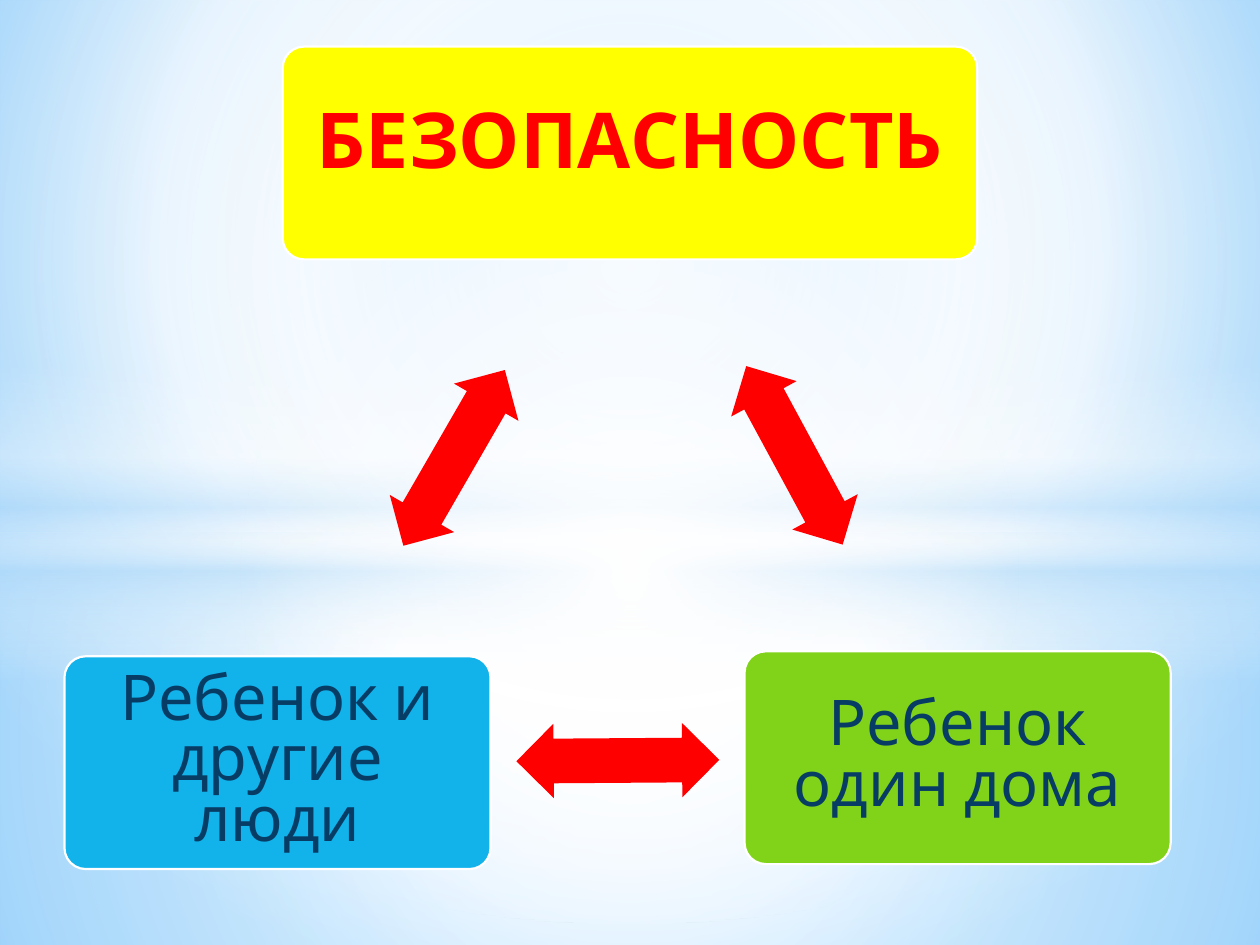
from dataclasses import dataclass

from lxml.etree import SubElement
from pptx import Presentation
from pptx.dml.color import RGBColor
from pptx.enum.shapes import MSO_SHAPE
from pptx.enum.text import MSO_ANCHOR, MSO_AUTO_SIZE, PP_ALIGN
from pptx.oxml.ns import qn
from pptx.util import Cm, Pt


@dataclass(frozen=True)
class Theme:
    font: str = "Karla"
    title: int = 44
    body: int = 36
    white: str = "FFFFFF"
    sky: str = "B4DCFA"
    pale: str = "9ED5FF"
    deep: str = "5BB9FF"
    yellow: str = "FFFF00"
    green: str = "81D31A"
    blue: str = "12B2EB"
    red: str = "FF0000"
    edge: str = "CD1D00"
    navy: str = "073C65"


LOOK = Theme()
CENTER = (50, 50, 50, 50)


def tint(fill, color):
    fill.solid()
    fill.fore_color.rgb = RGBColor.from_string(color)


def blend(fill, root, stops, focus=None):
    """Gradient of (place, colour, opacity); round if a focus is given."""
    fill.gradient()
    grad = root.find(".//" + qn("a:gradFill"))
    for part in list(grad):
        grad.remove(part)
    row = SubElement(grad, qn("a:gsLst"))
    for place, color, alpha in stops:
        stop = SubElement(row, qn("a:gs"), pos=str(place * 1000))
        tone = SubElement(stop, qn("a:srgbClr"), val=color)
        if alpha < 100:
            SubElement(tone, qn("a:alpha"), val=str(alpha * 1000))
    if focus:
        ring = SubElement(grad, qn("a:path"), path="circle")
        sides = {k: str(v * 1000) for k, v in zip("ltrb", focus)}
        SubElement(ring, qn("a:fillToRect"), **sides)
    else:
        SubElement(grad, qn("a:lin"), ang="5400000", scaled="0")


def add_form(slide, kind, area):
    form = slide.shapes.add_shape(kind, *map(Cm, area))
    form.shadow.inherit = False
    form.line.fill.background()
    return form


def add_glow(slide, kind, area, stops, focus=CENTER):
    form = add_form(slide, kind, area)
    blend(form.fill, form.element, stops, focus)


def add_run(frame, text, size, color, bold=False):
    para = frame.paragraphs[0]
    para.alignment = PP_ALIGN.CENTER
    run = para.add_run()
    run.text = text
    run.font.name = LOOK.font
    run.font.size = Pt(size)
    run.font.bold = bold
    tint(run.font.fill, color)
    return run


def add_box(slide, area, color, text=None):
    box = add_form(slide, MSO_SHAPE.ROUNDED_RECTANGLE, area)
    box.adjustments[0] = 0.1
    tint(box.fill, color)
    tint(box.line.fill, LOOK.white)
    box.line.width = Pt(1.25)
    if text:
        frame = box.text_frame
        frame.word_wrap = True
        frame.vertical_anchor = MSO_ANCHOR.MIDDLE
        frame.margin_left = frame.margin_right = Cm(0.5)
        frame.margin_top = frame.margin_bottom = Cm(0.5)
        add_run(frame, text, LOOK.body, LOOK.navy)
        frame.paragraphs[0].line_spacing = 0.8


def add_arrow(slide, left, top, angle):
    arrow = add_form(slide, MSO_SHAPE.LEFT_RIGHT_ARROW, (left, top, 4.09, 1.5))
    arrow.adjustments[0] = 0.6
    arrow.adjustments[1] = 0.5
    arrow.rotation = angle
    tint(arrow.fill, LOOK.red)


def add_title(slide, area, text):
    box = slide.shapes.add_textbox(*map(Cm, area))
    frame = box.text_frame
    frame.word_wrap = True
    frame.auto_size = MSO_AUTO_SIZE.SHAPE_TO_FIT_TEXT
    run = add_run(frame, text, LOOK.title, LOOK.red, bold=True)
    # Letter outline, which must come first in the run properties
    props = run.font.fill and run._r.get_or_add_rPr()
    line = SubElement(props, qn("a:ln"), w=str(Pt(2.48)))
    solid = SubElement(line, qn("a:solidFill"))
    SubElement(solid, qn("a:srgbClr"), val=LOOK.edge)
    props.insert(0, line)


def add_back(slide):
    white, sky = LOOK.white, LOOK.sky
    blend(slide.background.fill, slide.element,
          [(0, LOOK.pale, 100), (60, white, 100), (100, LOOK.deep, 100)],
          (20, 10, 20, 60))
    rect = MSO_SHAPE.RECTANGLE
    # Ground and sky
    add_glow(slide, rect, (0, 10.74, 25.4, 8.31),
             [(0, white, 91), (37, white, 76), (100, sky, 79)])
    add_glow(slide, rect, (0, 0, 25.4, 10.74),
             [(0, white, 89), (48, white, 62), (100, sky, 79)])
    # Horizon band and central light
    add_glow(slide, rect, (0, 7.37, 25.4, 6.35),
             [(0, white, 0), (29, white, 30), (45, sky, 40),
              (55, white, 26), (65, sky, 60), (100, white, 0)], None)
    add_glow(slide, MSO_SHAPE.OVAL, (0, 4.45, 25.4, 14.17),
             [(0, white, 100), (54, white, 0)])


def main():
    deck = Presentation()
    deck.slide_width, deck.slide_height = Cm(25.4), Cm(19.05)
    slide = deck.slides.add_slide(deck.slide_layouts[6])
    add_back(slide)

    # Three topics
    add_box(slide, (5.7, 0.94, 14, 4.29), LOOK.yellow)
    add_box(slide, (15.01, 13.13, 8.59, 4.29), LOOK.green,
            "Ребенок один дома")
    add_box(slide, (1.3, 13.23, 8.59, 4.29), LOOK.blue,
            "Ребенок и другие люди")

    # Arrows between the topics
    for left, top, angle in ((13.97, 8.43, 61.6), (10.41, 14.58, 179.6),
                             (7.11, 8.48, 300)):
        add_arrow(slide, left, top, angle)

    add_title(slide, (6.1, 1.73, 13.2, 2.13), "БЕЗОПАСНОСТЬ")
    deck.save("out.pptx")


if __name__ == "__main__":
    main()
